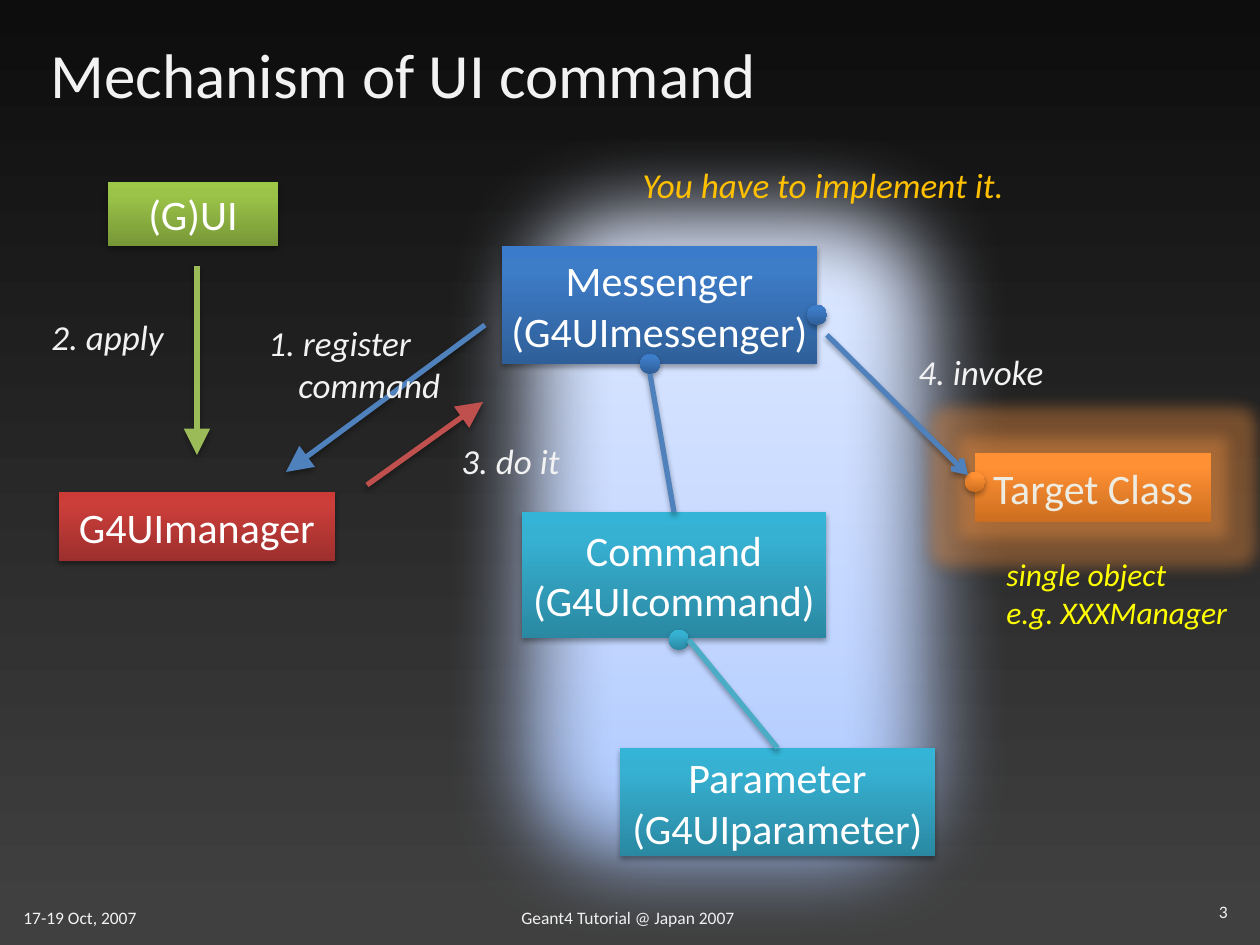
from copy import deepcopy

from lxml import etree
from pptx import Presentation
from pptx.dml.color import RGBColor
from pptx.enum.shapes import MSO_CONNECTOR, MSO_SHAPE
from pptx.enum.text import MSO_ANCHOR, MSO_AUTO_SIZE, PP_ALIGN
from pptx.oxml.ns import qn
from pptx.util import Emu, Pt

RECTANGLE, ROUNDED, OVAL = MSO_SHAPE.RECTANGLE, MSO_SHAPE.ROUNDED_RECTANGLE, MSO_SHAPE.OVAL
STRAIGHT = MSO_CONNECTOR.STRAIGHT
MIDDLE, TOP = MSO_ANCHOR.MIDDLE, MSO_ANCHOR.TOP
LEFT, CENTER, RIGHT = PP_ALIGN.LEFT, PP_ALIGN.CENTER, PP_ALIGN.RIGHT
GROW, FIXED = MSO_AUTO_SIZE.SHAPE_TO_FIT_TEXT, MSO_AUTO_SIZE.NONE

WHITE = RGBColor(0xFF, 0xFF, 0xFF)
LIGHT = RGBColor(0xF2, 0xF2, 0xF2)
CREAM = RGBColor(0xEE, 0xEC, 0xE1)
AMBER = RGBColor(0xFF, 0xC0, 0x00)
YELLOW = RGBColor(0xFF, 0xFF, 0x00)
BLUE_LINE = RGBColor(0x4F, 0x81, 0xBD)
GREEN_LINE = RGBColor(0x9B, 0xBB, 0x59)
RED_LINE = RGBColor(0xC0, 0x50, 0x4D)
TEAL_LINE = RGBColor(0x4B, 0xAC, 0xC6)
HALO_LINE = RGBColor(0x4B, 0x7E, 0xBC)
GLOW = RGBColor(0xF7, 0x96, 0x46)
BLACK = RGBColor(0x00, 0x00, 0x00)


def ramp(*stops):
    return [(position, RGBColor.from_string(color)) for position, color in stops]


BACKDROP = ramp((0.03, "404040"), (1, "0D0D0D"))
HALO = ramp((0, "A4C4FF"), (0.35, "BFD4FF"), (1, "E6EEFF"))
GREEN = ramp((0, "779737"), (0.8, "9BC348"), (1, "9DC746"))
RED = ramp((0, "9C2F2D"), (0.8, "CB3E3A"), (1, "CE3B37"))
BLUE = ramp((0, "2F5F99"), (0.8, "3D7CC7"), (1, "3A7CCB"))
TEAL = ramp((0, "2A88A2"), (0.8, "37B1D2"), (1, "34B4D6"))
ORANGE = ramp((0, "CC6E20"), (0.8, "FF9034"), (1, "FF9136"))

SHADOW = ("outerShdw", {"blurRad": 40000, "dist": 23000, "dir": 5400000, "rotWithShape": 0}, BLACK, 35000)
ORANGE_GLOW = ("glow", {"rad": 228600}, GLOW, 40000)
SOFT_EDGE = ("softEdge", {"rad": 635000}, None, None)


class Diagram:
    scale = 914400 / 126
    font_name = "Calibri"

    def __init__(self, slide):
        self.slide = slide

    def px(self, *lengths):
        return [Emu(round(length * self.scale)) for length in lengths]

    def gradient(self, fill, owner, stops):
        fill.gradient()
        fill.gradient_angle = 90
        stop_list = next(owner.iter(qn("a:gsLst")))
        for _ in stops[2:]:
            stop_list.append(deepcopy(stop_list[0]))
        for stop, (position, color) in zip(fill.gradient_stops, stops):
            stop.position = position
            stop.color.rgb = color

    def effects(self, shape, *effects):
        effect_list = etree.SubElement(shape._element.spPr, qn("a:effectLst"))
        for tag, attributes, color, alpha in effects:
            values = {key: str(value) for key, value in attributes.items()}
            effect = etree.SubElement(effect_list, qn(f"a:{tag}"), values)
            if color is not None:
                element = etree.SubElement(effect, qn("a:srgbClr"), val=str(color))
                etree.SubElement(element, qn("a:alpha"), val=str(alpha))

    def set_text(self, shape, text, size, color, italic=False, align=LEFT,
                 anchor=TOP, wrap=True, auto_size=FIXED, hanging=0):
        frame = shape.text_frame
        frame.text = text
        settings = {"word_wrap": wrap, "auto_size": auto_size, "vertical_anchor": anchor}
        for name, value in settings.items():
            setattr(frame, name, value)
        style = {"name": self.font_name, "size": Pt(size), "italic": italic}
        for paragraph in frame.paragraphs:
            paragraph.alignment = align
            if hanging:
                indent, = self.px(hanging)
                properties = paragraph._p.get_or_add_pPr()
                properties.set("marL", str(indent))
                properties.set("indent", str(-indent))
            for run in paragraph.runs:
                for name, value in style.items():
                    setattr(run.font, name, value)
                run.font.color.rgb = color

    def title(self, box, text):
        shape = self.slide.shapes.title
        for name, value in zip(("left", "top", "width", "height"), self.px(*box)):
            setattr(shape, name, value)
        self.set_text(shape, text, 36, LIGHT, anchor=MIDDLE)

    def label(self, box, text, size=20, color=LIGHT, italic=True, **options):
        shape = self.slide.shapes.add_textbox(*self.px(*box))
        self.set_text(shape, text, size, color, italic, **options)

    def shape(self, kind, box, stops, *effects):
        shape = self.slide.shapes.add_shape(kind, *self.px(*box))
        self.gradient(shape.fill, shape._element.spPr, stops)
        shape.line.fill.background()
        self.effects(shape, *effects)
        return shape

    def box(self, box, text, stops, color=WHITE, effects=(SHADOW,)):
        shape = self.shape(RECTANGLE, box, stops, *effects)
        self.set_text(shape, text, 24, color, align=CENTER, anchor=MIDDLE, wrap=False)
        return shape

    def dot(self, left, top, stops):
        self.shape(OVAL, (left, top, 20, 20), stops, SHADOW)

    def line(self, points, color, head=None, head_size="lg", target=None):
        connector = self.slide.shapes.add_connector(STRAIGHT, *self.px(*points))
        if target is not None:
            connector.end_connect(target, 0)
        connector.line.color.rgb = color
        connector.line.width = Pt(3)
        if head:
            outline = connector._element.spPr.find(qn("a:ln"))
            etree.SubElement(outline, qn("a:tailEnd"), type=head, w=head_size, len=head_size)
        self.effects(connector, SHADOW)


def main():
    presentation = Presentation()
    presentation.slide_width, presentation.slide_height = Emu(9144000), Emu(6858000)
    slide = presentation.slides.add_slide(presentation.slide_layouts[5])
    diagram = Diagram(slide)
    diagram.gradient(slide.background.fill, slide._element, BACKDROP)

    footer = {"size": 10, "italic": False}
    fitted = {"wrap": False, "auto_size": GROW}
    diagram.label((11, 901, 141, 34), "17-19 Oct, 2007", **footer, **fitted)
    diagram.label((509, 901, 243, 34), "Geant4 Tutorial @ Japan 2007", **footer, **fitted)
    halo = diagram.shape(ROUNDED, (443, 128, 571, 817), HALO, SOFT_EDGE)
    halo.line.color.rgb = HALO_LINE
    halo.line.width = Pt(0.75)
    diagram.title((38, 28, 1134, 91), "Mechanism of UI command")
    diagram.label((946, 895, 294, 50), "3", align=RIGHT, **footer)

    diagram.box((108, 182, 170, 64), "(G)UI", GREEN)
    diagram.box((59, 492, 276, 69), "G4UImanager", RED)
    diagram.box((502, 246, 315, 118), "Messenger\n(G4UImessenger)", BLUE)
    command = diagram.box((522, 512, 304, 126), "Command\n(G4UIcommand)", TEAL)
    parameter = diagram.box((620, 748, 315, 108), "Parameter\v(G4UIparameter)", TEAL)
    diagram.box((975, 453, 236, 69), "Target Class", ORANGE, CREAM, (ORANGE_GLOW, SHADOW))

    diagram.line((485, 325, 286, 472), BLUE_LINE, "triangle")
    diagram.line((197, 266, 197, 455), GREEN_LINE, "triangle")
    diagram.line((367, 485, 483, 402), RED_LINE, "triangle")

    diagram.label((256, 315, 217, 97), "1. register\vcommand", hanging=30, auto_size=GROW)
    diagram.label((39, 309, 168, 55), "2. apply", auto_size=GROW)
    diagram.label((449, 433, 210, 55), "3. do it", auto_size=GROW)
    diagram.label((906, 344, 210, 55), "4. invoke", auto_size=GROW)
    diagram.label((630, 157, 389, 55), "You have to implement it.", color=AMBER, **fitted)

    for left, top, stops in ((965, 472, ORANGE), (807, 305, BLUE), (640, 354, BLUE), (669, 630, TEAL)):
        diagram.dot(left, top, stops)
    diagram.line((827, 335, 968, 475), BLUE_LINE, "arrow", "med")
    diagram.line((689, 640, 777, 748), TEAL_LINE, target=parameter)
    diagram.line((650, 374, 674, 512), BLUE_LINE, target=command)
    diagram.label((994, 549, 248, 89), "single object\ne.g. XXXManager", 18, YELLOW, **fitted)

    presentation.save("out.pptx")


if __name__ == "__main__":
    main()
